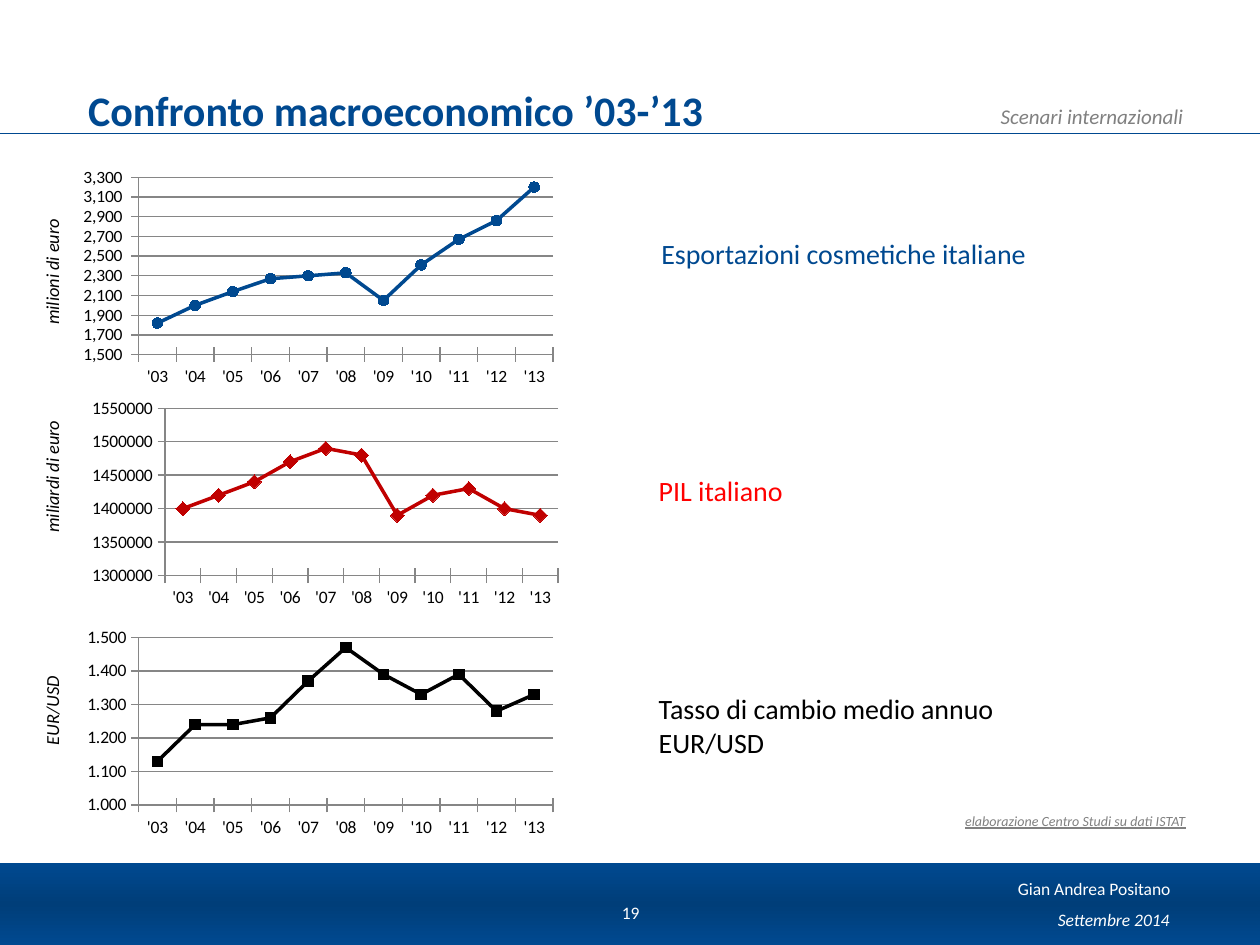
"""Build the slide comparing exports, GDP and exchange rate, 2003 to 2013."""
from copy import deepcopy
from dataclasses import dataclass

from lxml import etree
from pptx import Presentation
from pptx.chart.data import CategoryChartData
from pptx.dml.color import RGBColor
from pptx.enum.chart import XL_CHART_TYPE, XL_MARKER_STYLE, XL_TICK_MARK
from pptx.enum.shapes import MSO_CONNECTOR, MSO_SHAPE
from pptx.enum.text import MSO_ANCHOR, PP_ALIGN
from pptx.oxml.ns import qn
from pptx.util import Inches, Pt

LINE = XL_CHART_TYPE.LINE_MARKERS
CROSS = XL_TICK_MARK.CROSS
DOT, GEM, BOX = XL_MARKER_STYLE.CIRCLE, XL_MARKER_STYLE.DIAMOND, XL_MARKER_STYLE.SQUARE
LEFT, MID, RIGHT = PP_ALIGN.LEFT, PP_ALIGN.CENTER, PP_ALIGN.RIGHT
TOP, CENTER, LOW = MSO_ANCHOR.TOP, MSO_ANCHOR.MIDDLE, MSO_ANCHOR.BOTTOM
FONT = "Calibri"
HUES = {"blue": "004990", "navy": "003E79", "red": "FF0000", "brick": "C00000",
        "black": "000000", "gray": "808080", "grid": "868686", "white": "FFFFFF"}
YEARS = [f"'{year:02}" for year in range(3, 14)]


@dataclass
class Label:
    text: str
    at: tuple[float, float, float, float]
    size: float
    hue: str
    align: int = LEFT
    anchor: int = TOP
    slant: bool = False
    under: bool = False
    bold: bool = False
    turn: int = 0


@dataclass
class Graph:
    at: tuple[float, float, float, float]
    plot: tuple[float, float, float, float]
    scale: tuple[float, float, float]
    style: str
    hue: str
    mark: int
    size: int
    vals: list[float]


GRAPHS = [
    Graph((0.55, 1.33, 3.92, 1.76), (1.1, 1.37, 3.29, 1.44), (1500, 3300, 200),
          "#,##0_-", "blue", DOT, 6,
          [1820, 2000, 2140, 2270, 2300, 2330, 2050, 2410, 2670, 2860, 3200]),
    Graph((0.66, 3.13, 3.84, 1.73), (1.31, 3.24, 3.12, 1.33), (1300000, 1550000, 50000),
          "0", "brick", GEM, 8,
          [1400000, 1420000, 1440000, 1470000, 1490000, 1480000,
           1390000, 1420000, 1430000, 1400000, 1390000]),
    Graph((0.62, 4.95, 3.85, 1.73), (1.1, 5.06, 3.29, 1.33), (1, 1.5, 0.1),
          "0.000", "black", BOX, 6,
          [1.13, 1.24, 1.24, 1.26, 1.37, 1.47, 1.39, 1.33, 1.39, 1.28, 1.33]),
]
TITLE = Label("Confronto macroeconomico ’03-’13", (0.5, 0.12, 6.97, 0.95), 24, "blue",
              anchor=LOW, bold=True)
AUTHOR = Label("Gian Andrea Positano", (7.98, 6.94, 1.53, 0.31), 10, "white")
LABELS = [
    Label("Settembre 2014", (7.86, 7.19, 1.52, 0.21), 10, "white", RIGHT, CENTER, True),
    Label("Scenari internazionali", (6.09, 0.77, 3.4, 0.3), 12, "gray", RIGHT, slant=True),
    Label("19", (4.72, 7.04, 0.57, 0.4), 10, "white", MID, CENTER),
    Label("elaborazione Centro Studi su dati ISTAT", (6.11, 6.4, 3.4, 0.24), 8, "gray",
          RIGHT, slant=True, under=True),
    Label("Esportazioni cosmetiche italiane", (5.15, 1.83, 3.63, 0.37), 16, "blue"),
    Label("PIL italiano", (5.13, 3.71, 3.63, 0.37), 16, "red"),
    Label("Tasso di cambio medio annuo EUR/USD", (5.13, 5.44, 3.63, 0.64), 16, "black"),
]
UNITS = [("milioni di euro", 1.94, LEFT), ("miliardi di euro", 3.59, LEFT),
         ("EUR/USD", 5.5, MID)]


def color(hue: str) -> RGBColor:
    return RGBColor.from_string(HUES[hue])


def place(shape, at: tuple) -> None:
    shape.left, shape.top, shape.width, shape.height = map(Inches, at)


def write(shape, label: Label):
    place(shape, label.at)
    shape.rotation = label.turn
    frame = shape.text_frame
    frame.word_wrap = True
    frame.vertical_anchor = label.anchor
    para = frame.paragraphs[0]
    para.alignment = label.align
    run = para.add_run()
    run.text = label.text
    font = run.font
    font.name, font.size = FONT, Pt(label.size)
    font.bold, font.italic, font.underline = label.bold, label.slant, label.under
    font.color.rgb = color(label.hue)
    return para


def add_label(slide, label: Label):
    return write(slide.shapes.add_textbox(0, 0, 0, 0), label)


def add_band(slide) -> None:
    band = slide.shapes.add_shape(MSO_SHAPE.RECTANGLE, *map(Inches, (-0.19, 6.85, 10.3, 0.65)))
    band.shadow.inherit = False
    band.line.fill.background()
    fill = band.fill
    fill.gradient()
    fill.gradient_angle = 270
    first = next(band.element.iter(qn("a:gs")))
    first.addnext(deepcopy(first))
    for stop, hue, spot in zip(fill.gradient_stops, ("blue", "navy", "blue"), (0, 0.5, 1)):
        stop.color.rgb = color(hue)
        stop.position = spot


def add_rule(slide) -> None:
    rule = slide.shapes.add_connector(MSO_CONNECTOR.STRAIGHT,
                                      *map(Inches, (-0.17, 1.06, 10.07, 1.06)))
    rule.line.color.rgb = color("blue")
    rule.line.width = Pt(0.75)
    etree.SubElement(rule.element.spPr, qn("a:effectLst"))


def set_plot(chart, graph: Graph) -> None:
    area = chart.element.find(".//" + qn("c:plotArea"))
    for old in area.findall(qn("c:layout")):
        area.remove(old)
    layout = etree.Element(qn("c:layout"))
    area.insert(0, layout)
    manual = etree.SubElement(layout, qn("c:manualLayout"))
    left, top, width, height = graph.at
    x, y, w, h = graph.plot
    rules = {"layoutTarget": "inner", "xMode": "edge", "yMode": "edge",
             "x": (x - left) / width, "y": (y - top) / height,
             "w": w / width, "h": h / height}
    for tag, val in rules.items():
        etree.SubElement(manual, qn("c:" + tag)).set("val", str(val))


def add_graph(slide, graph: Graph) -> None:
    data = CategoryChartData()
    data.categories = YEARS
    data.add_series("Series 1", graph.vals)
    chart = slide.shapes.add_chart(LINE, *map(Inches, graph.at), data).chart
    chart.has_legend = chart.has_title = False
    chart.font.name, chart.font.size = FONT, Pt(10)
    chart.font.color.rgb = color("black")
    chart.plots[0].vary_by_categories = False
    years, axis = chart.category_axis, chart.value_axis
    axis.minimum_scale, axis.maximum_scale, axis.major_unit = graph.scale
    axis.tick_labels.number_format = graph.style
    axis.tick_labels.number_format_is_linked = False
    axis.has_major_gridlines = True
    for part in (years, axis):
        part.major_tick_mark = CROSS
    for line in (years.format.line, axis.format.line, axis.major_gridlines.format.line):
        line.color.rgb = color("grid")
        line.width = Pt(0.75)
    series = chart.plots[0].series[0]
    series.smooth = False
    series.format.line.width = Pt(2)
    mark = series.marker
    mark.style, mark.size = graph.mark, graph.size
    mark.format.fill.solid()
    mark.format.fill.fore_color.rgb = color(graph.hue)
    for line in (series.format.line, mark.format.line):
        line.color.rgb = color(graph.hue)
    set_plot(chart, graph)


def main() -> None:
    deck = Presentation()
    deck.slide_width, deck.slide_height = Inches(10), Inches(7.5)
    slide = deck.slides.add_slide(deck.slide_layouts[5])
    add_band(slide)
    add_rule(slide)
    title = slide.shapes.title
    write(title, TITLE)
    frame = title.text_frame
    frame.margin_left = frame.margin_right = Inches(0.2)
    frame.margin_top = frame.margin_bottom = 0
    add_label(slide, AUTHOR).line_spacing = 0.9
    for graph in GRAPHS:
        add_graph(slide, graph)
    for label in LABELS:
        add_label(slide, label)
    for text, top, align in UNITS:
        add_label(slide, Label(text, (-0.18, top, 1.19, 0.28), 10.5, "black", align,
                               slant=True, turn=270))
    deck.save("out.pptx")


if __name__ == "__main__":
    main()
